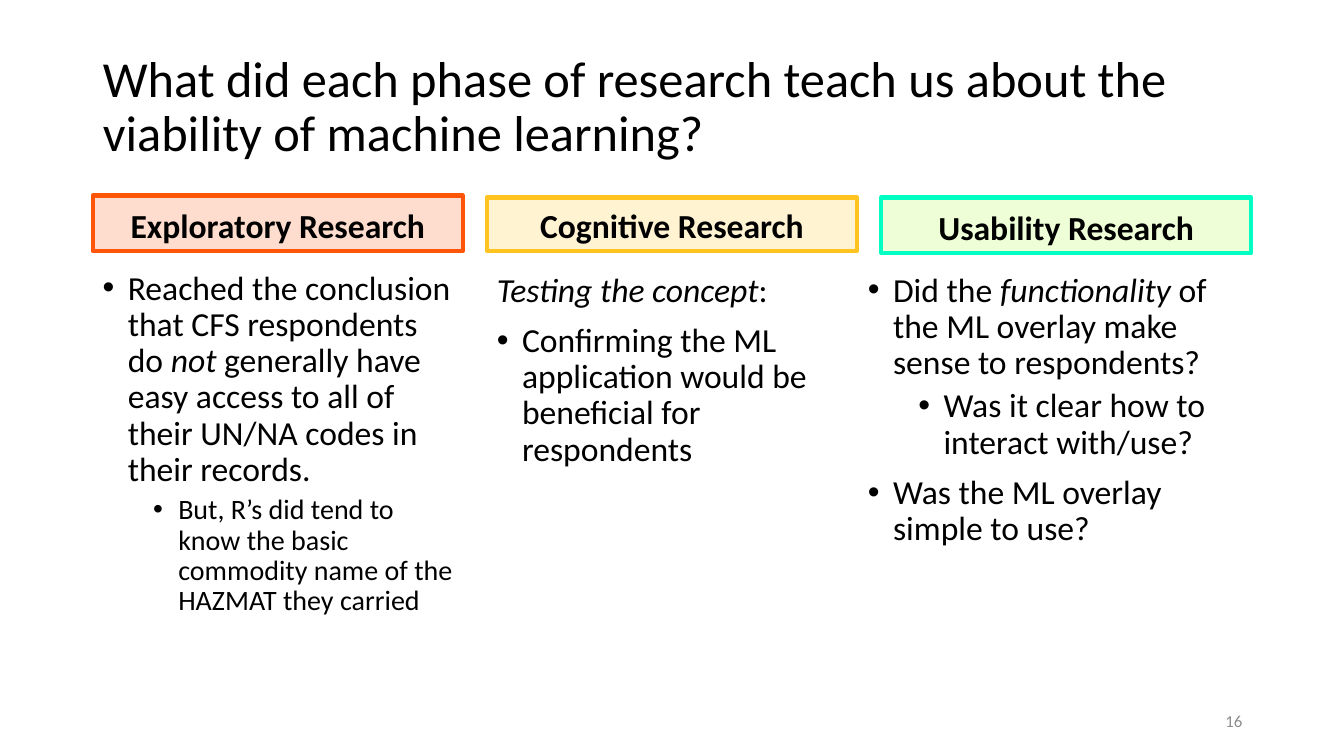
from lxml import etree
from pptx import Presentation
from pptx.dml.color import RGBColor
from pptx.enum.shapes import MSO_SHAPE
from pptx.enum.text import MSO_ANCHOR, MSO_AUTO_SIZE, PP_ALIGN
from pptx.oxml.ns import qn
from pptx.util import Inches, Pt

FONT = "Calibri"
TITLE_ONLY = 5
COLUMN_WIDTH = 3.67
COLORS = {
    "text": "000000",
    "page_number": "8C8C8C",
    "exploratory_fill": "FFDDCE", "exploratory_line": "FF5509",
    "cognitive_fill": "FFF3D2", "cognitive_line": "FFC41F",
    "usability_fill": "EEFFD7", "usability_line": "01FFC3",
}
# Each finding: (bullet level or None, size, text with *italic* parts)
PHASES = [
    {"key": "exploratory", "name": "Exploratory Research",
     "header": (0.92, 1.94, 0.55), "body": (0.92, 2.64, 4.18),
     "findings": [
         (0, 24, "Reached the conclusion that CFS respondents do *not* generally "
                 "have easy access to all of their UN/NA codes in their records."),
         (1, 20, "But, R’s did tend to know the basic commodity name of the "
                 "HAZMAT they carried"),
     ]},
    {"key": "cognitive", "name": "Cognitive Research",
     "header": (4.83, 1.96, 0.53), "body": (4.83, 2.66, 3.97),
     "findings": [
         (None, 24, "*Testing the concept*:"),
         (0, 24, "Confirming the ML application would be beneficial for respondents"),
     ]},
    {"key": "usability", "name": "Usability Research",
     "header": (8.74, 1.96, 0.55), "body": (8.51, 2.66, 3.97),
     "findings": [
         (0, 24, "Did the *functionality* of the ML overlay make sense to respondents?"),
         (1, 24, "Was it clear how to interact with/use?"),
         (0, 24, "Was the ML overlay simple to use?"),
     ]},
]


def rgb(name):
    return RGBColor.from_string(COLORS[name])


def style_font(font, size, color="text", bold=False, italic=False):
    font.name = FONT
    font.size = Pt(size)
    font.color.rgb = rgb(color)
    font.bold = bold
    font.italic = italic


def add_bullet(paragraph, level):
    paragraph.level = level
    properties = paragraph._p.get_or_add_pPr()
    properties.set("marL", str(Inches(0.25 + 0.5 * level)))
    properties.set("indent", str(Inches(-0.25)))
    etree.SubElement(properties, qn("a:buFont"), typeface="Arial")
    etree.SubElement(properties, qn("a:buChar"), char="•")


def add_title(slide, wording):
    title = slide.shapes.title
    title.left, title.top = Inches(0.92), Inches(0.35)
    title.width, title.height = Inches(11.5), Inches(1.45)
    frame = title.text_frame
    frame.text = wording
    frame.auto_size = MSO_AUTO_SIZE.NONE
    frame.vertical_anchor = MSO_ANCHOR.MIDDLE
    heading = frame.paragraphs[0]
    heading.alignment = PP_ALIGN.LEFT
    heading.line_spacing = 0.9
    style_font(heading.runs[0].font, 36)


def add_phase_header(slide, phase):
    left, top, height = phase["header"]
    header = slide.shapes.add_shape(
        MSO_SHAPE.RECTANGLE, Inches(left), Inches(top),
        Inches(COLUMN_WIDTH), Inches(height))
    header.shadow.inherit = False
    header.fill.solid()
    header.fill.fore_color.rgb = rgb(phase["key"] + "_fill")
    header.line.color.rgb = rgb(phase["key"] + "_line")
    header.line.width = Pt(3)
    frame = header.text_frame
    frame.text = phase["name"]
    frame.vertical_anchor = MSO_ANCHOR.BOTTOM
    label = frame.paragraphs[0]
    label.alignment = PP_ALIGN.CENTER
    label.line_spacing = 0.9
    style_font(label.runs[0].font, 24, bold=True)


def add_findings(slide, phase):
    left, top, height = phase["body"]
    body = slide.shapes.add_textbox(
        Inches(left), Inches(top), Inches(COLUMN_WIDTH), Inches(height))
    frame = body.text_frame
    frame.word_wrap = True
    for index, (level, size, wording) in enumerate(phase["findings"]):
        finding = frame.add_paragraph() if index else frame.paragraphs[0]
        finding.line_spacing = 0.9
        if index:
            finding.space_before = Pt(5 if level == 1 else 10)
        if level is not None:
            add_bullet(finding, level)
        for part, words in enumerate(wording.split("*")):
            if words:
                run = finding.add_run()
                run.text = words
                style_font(run.font, size, italic=part % 2 == 1)


def add_page_number(slide, number):
    box = slide.shapes.add_textbox(
        Inches(9.42), Inches(6.95), Inches(3), Inches(0.4))
    frame = box.text_frame
    frame.word_wrap = True
    frame.vertical_anchor = MSO_ANCHOR.MIDDLE
    frame.text = number
    frame.paragraphs[0].alignment = PP_ALIGN.RIGHT
    style_font(frame.paragraphs[0].runs[0].font, 12, "page_number")


def main():
    deck = Presentation()
    deck.slide_width, deck.slide_height = Inches(13.33), Inches(7.5)
    slide = deck.slides.add_slide(deck.slide_layouts[TITLE_ONLY])
    add_title(slide, "What did each phase of research teach us about the "
                     "viability of machine learning?")
    for phase in PHASES:
        add_phase_header(slide, phase)
        add_findings(slide, phase)
    add_page_number(slide, "16")
    deck.save("out.pptx")


if __name__ == "__main__":
    main()
